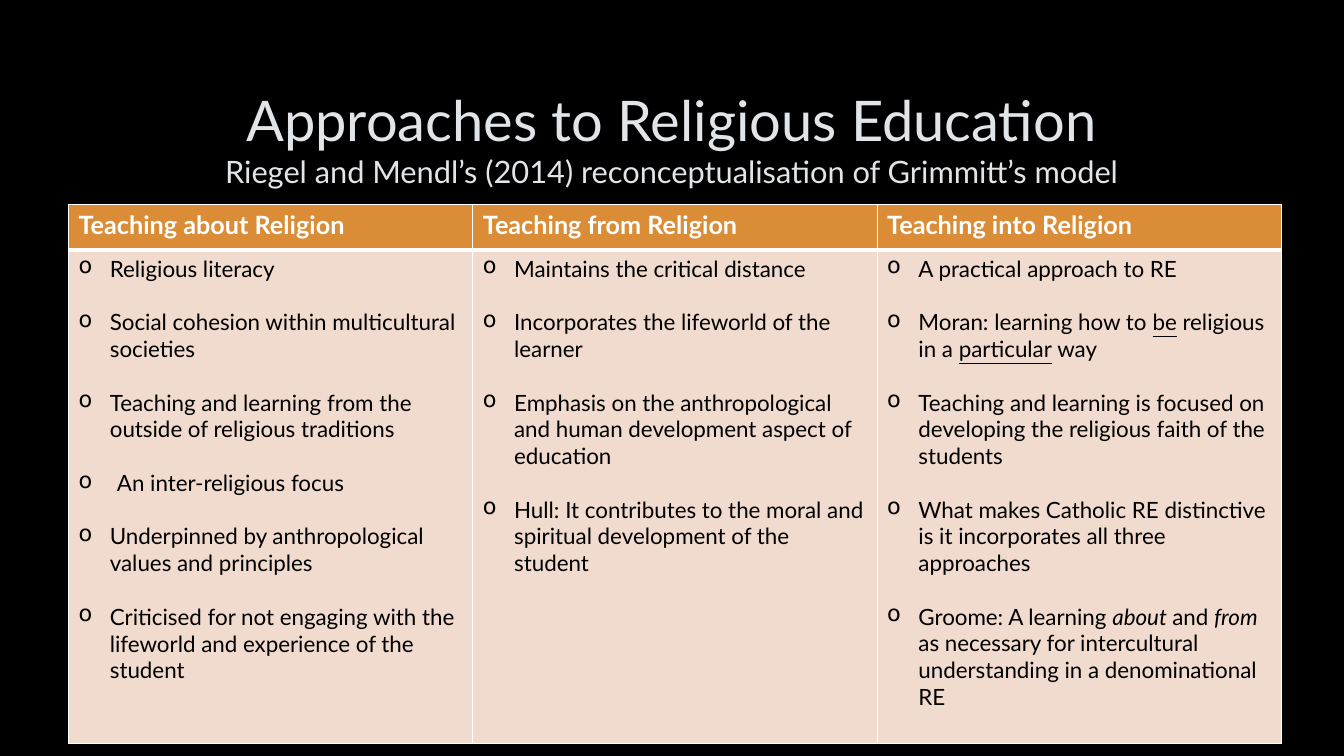
from lxml import etree
from pptx import Presentation
from pptx.dml.color import RGBColor
from pptx.enum.text import MSO_ANCHOR, PP_ALIGN
from pptx.oxml.ns import qn
from pptx.util import Inches, Pt

MIDDLE = MSO_ANCHOR.MIDDLE
CENTER = PP_ALIGN.CENTER

TITLE = [("Approaches to Religious Education", 40),
         ("Riegel and Mendl’s (2014) reconceptualisation of Grimmitt’s model", 22)]
COLUMNS = [
    ("Teaching about Religion", [
        "Religious literacy",
        "Social cohesion within multicultural societies",
        "Teaching and learning from the outside of religious traditions",
        "An inter-religious focus",
        "Underpinned by anthropological values and principles",
        "Criticised for not engaging with the lifeworld and experience of the student",
    ]),
    ("Teaching from Religion", [
        "Maintains the critical distance",
        "Incorporates the lifeworld of the learner",
        "Emphasis on the anthropological and human development aspect of education",
        "Hull: It contributes to the moral and spiritual development of the student",
    ]),
    ("Teaching into Religion", [
        "A practical approach to RE",
        [("Moran: learning how to ", {}), ("be", {"underline": True}),
         (" religious in a ", {}), ("particular", {"underline": True}), (" way", {})],
        "Teaching and learning is focused on developing the religious faith of the students",
        "What makes Catholic RE distinctive is it incorporates all three approaches",
        [("Groome: A learning ", {}), ("about ", {"italic": True}), ("and ", {}),
         ("from", {"italic": True}),
         (" as necessary for intercultural understanding in a denominational RE", {})],
    ]),
]
WIDE_INDENT = {"An inter-religious focus": 0.38}
INDENT = 0.31
TABLE_LEFT, TABLE_TOP, COL_W = 0.68, 2.03, 4.01
HEAD_H, BODY_H = 0.45, 4.9
HEAD = {"size": Pt(18), "bold": True}
BODY = {"size": Pt(16), "bold": False}
WHITE, BLACK, PALE, ORANGE, PEACH = "FFFFFF", "000000", "E2E5E8", "DA8D36", "F1DBCE"


def rgb(value):
    return RGBColor.from_string(value)


def add_run(p, text, color, fmt):
    r = p.add_run()
    r.text = text
    r.font.name = "Lato"
    r.font.color.rgb = rgb(color)
    for name, value in fmt.items():
        setattr(r.font, name, value)


def add_bullet(p, indent):
    pPr = p._p.get_or_add_pPr()
    pPr.set("marL", str(Inches(indent)))
    pPr.set("indent", str(-Inches(indent)))
    etree.SubElement(pPr, qn("a:buChar")).set("char", "o")


def style_cell(cell, fill, widths):
    tcPr = cell._tc.get_or_add_tcPr()
    for side, width in zip("LRTB", widths):
        ln = etree.SubElement(tcPr, qn(f"a:ln{side}"), w=str(Pt(width)))
        solid = etree.SubElement(ln, qn("a:solidFill"))
        etree.SubElement(solid, qn("a:srgbClr"), val=WHITE)
    cell.fill.solid()
    cell.fill.fore_color.rgb = rgb(fill)


prs = Presentation()
prs.slide_width, prs.slide_height = Inches(13.33), Inches(7.5)
s = prs.slides.add_slide(prs.slide_layouts[6])
s.background.fill.solid()
s.background.fill.fore_color.rgb = rgb(BLACK)

tf = s.shapes.add_textbox(Inches(1), Inches(0.67), Inches(11.32), Inches(1.38)).text_frame
tf.word_wrap = True
tf.vertical_anchor = MIDDLE
for i, (line, size) in enumerate(TITLE):
    p = tf.add_paragraph() if i else tf.paragraphs[0]
    p.alignment = CENTER
    add_run(p, line, PALE, {"size": Pt(size)})

table = s.shapes.add_table(2, len(COLUMNS), Inches(TABLE_LEFT), Inches(TABLE_TOP),
                           Inches(COL_W * len(COLUMNS)), Inches(HEAD_H + BODY_H)).table
table.horz_banding = False
for row, height in zip(table.rows, (HEAD_H, BODY_H)):
    row.height = Inches(height)

for c, (heading, points) in enumerate(COLUMNS):
    table.columns[c].width = Inches(COL_W)
    head, body = table.cell(0, c), table.cell(1, c)
    style_cell(head, ORANGE, (1, 1, 1, 3))
    style_cell(body, PEACH, (1, 1, 3, 1))
    add_run(head.text_frame.paragraphs[0], heading, WHITE, HEAD)
    tf = body.text_frame
    for i, point in enumerate(points):
        p = tf.add_paragraph() if i else tf.paragraphs[0]
        p.space_before = Pt(19.2 if i else 0)
        plain = isinstance(point, str)
        add_bullet(p, WIDE_INDENT.get(point, INDENT) if plain else INDENT)
        for text, fmt in [(point, {})] if plain else point:
            add_run(p, text, BLACK, {**BODY, **fmt})

prs.save("out.pptx")
